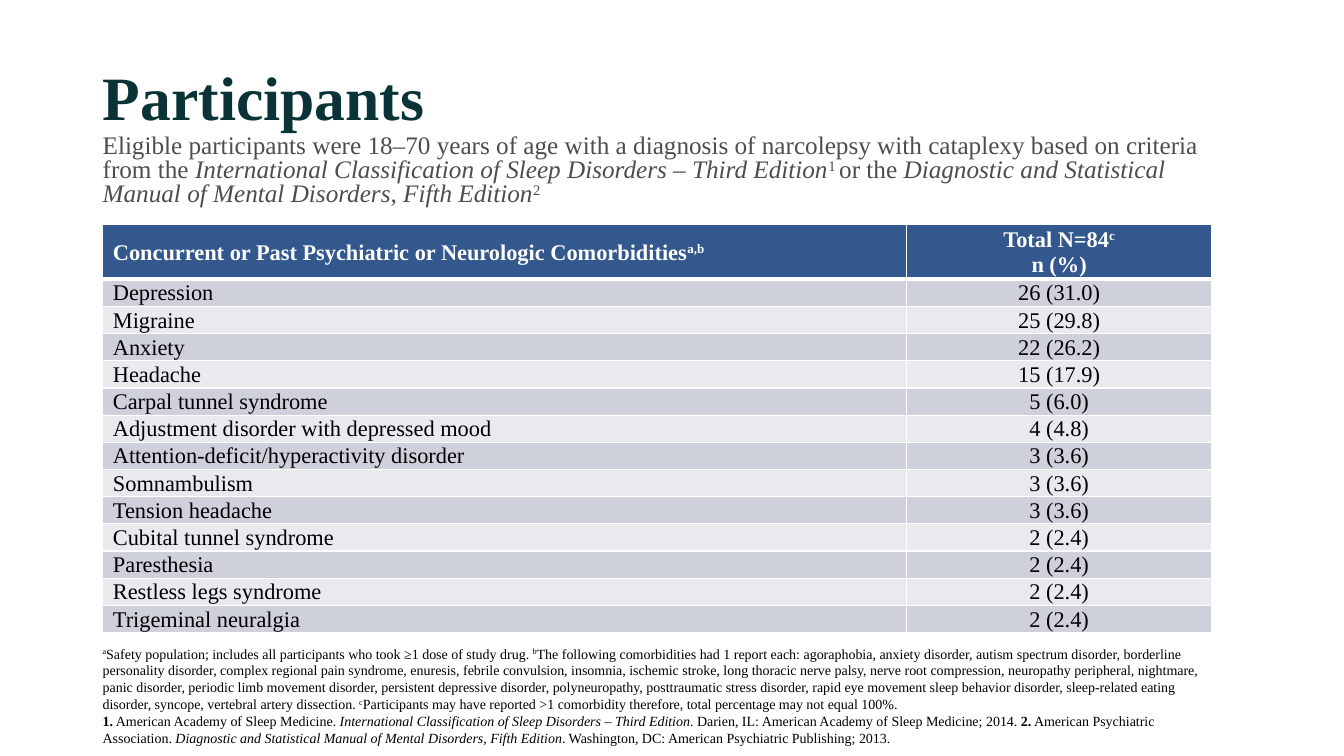
from lxml import etree
from pptx import Presentation
from pptx.dml.color import RGBColor
from pptx.enum import text
from pptx.oxml import ns
from pptx.util import Inches, Pt

FONT = "Times New Roman"
TEAL = RGBColor(0x0A, 0x33, 0x38)
GRAY = RGBColor(0x4D, 0x4D, 0x4D)
BLACK = RGBColor(0, 0, 0)
WHITE = RGBColor(0xFF, 0xFF, 0xFF)
BLUE = RGBColor(0x33, 0x58, 0x8D)
BANDS = (RGBColor(0xCE, 0xD1, 0xDB), RGBColor(0xE8, 0xEA, 0xEE))
PLAIN, BOLD, ITALIC, SUPER = range(4)

PARTICIPANT_TOTAL = 84
HEADINGS = (
    [[("Concurrent or Past Psychiatric or Neurologic Comorbidities", PLAIN), ("a,b", SUPER)]],
    [[("Total N=84", PLAIN), ("c", SUPER)], [("n (%)", PLAIN)]],
)
COMORBIDITIES = (
    ("Depression", 26),
    ("Migraine", 25),
    ("Anxiety", 22),
    ("Headache", 15),
    ("Carpal tunnel syndrome", 5),
    ("Adjustment disorder with depressed mood", 4),
    ("Attention-deficit/hyperactivity disorder", 3),
    ("Somnambulism", 3),
    ("Tension headache", 3),
    ("Cubital tunnel syndrome", 2),
    ("Paresthesia", 2),
    ("Restless legs syndrome", 2),
    ("Trigeminal neuralgia", 2),
)
ELIGIBILITY = [[
    ("Eligible participants were 18–70 years of age with a diagnosis of narcolepsy "
     "with cataplexy based on criteria from the ", PLAIN),
    ("International Classification of Sleep Disorders ‒ Third Edition", ITALIC),
    ("1 ", SUPER),
    ("or the ", PLAIN),
    ("Diagnostic and Statistical Manual of Mental Disorders, Fifth Edition", ITALIC),
    ("2", SUPER),
]]
FOOTNOTES = [
    [
        ("a", SUPER),
        ("Safety population; includes all participants who took ≥1 dose of study drug. ", PLAIN),
        ("b", SUPER),
        ("The following comorbidities had 1 report each: agoraphobia, anxiety disorder, "
         "autism spectrum disorder, borderline personality disorder, complex regional pain "
         "syndrome, enuresis, febrile convulsion, insomnia, ischemic stroke, long thoracic "
         "nerve palsy, nerve root compression, neuropathy peripheral, nightmare, panic "
         "disorder, periodic limb movement disorder, persistent depressive disorder, "
         "polyneuropathy, posttraumatic stress disorder, rapid eye movement sleep behavior "
         "disorder, sleep-related eating disorder, syncope, vertebral artery dissection. ", PLAIN),
        ("c", SUPER),
        ("Participants may have reported >1 comorbidity therefore, total percentage may "
         "not equal 100%.", PLAIN),
    ],
    [
        ("1.", BOLD),
        (" American Academy of Sleep Medicine. ", PLAIN),
        ("International Classification of Sleep Disorders – Third Edition", ITALIC),
        (". Darien, IL: American Academy of Sleep Medicine; 2014. ", PLAIN),
        ("2.", BOLD),
        (" American Psychiatric Association. ", PLAIN),
        ("Diagnostic and Statistical Manual of Mental Disorders, Fifth Edition", ITALIC),
        (". Washington, DC: American Psychiatric Publishing; 2013.", PLAIN),
    ],
]


def write(frame, paragraphs, size, color, bold=False, align=text.PP_ALIGN.LEFT, spacing=None):
    for index, pieces in enumerate(paragraphs):
        paragraph = frame.add_paragraph() if index else frame.paragraphs[0]
        paragraph.alignment = align
        paragraph.line_spacing = spacing
        font = paragraph.font
        font.name, font.size, font.bold = FONT, Pt(size), bold
        font.color.rgb = color
        for wording, style in pieces:
            run = paragraph.add_run()
            run.text = wording
            if style == BOLD:
                run.font.bold = True
            elif style == ITALIC:
                run.font.italic = True
            elif style == SUPER:
                run.font._element.set("baseline", "30000")


def add_title(slide, wording):
    title = slide.shapes.title
    title.left, title.top = Inches(0.92), Inches(0.27)
    title.width, title.height = Inches(11.5), Inches(1.45)
    title.text_frame.vertical_anchor = text.MSO_ANCHOR.MIDDLE
    write(title.text_frame, [[(wording, PLAIN)]], 44, TEAL, bold=True, spacing=0.9)


def add_note(slide, top, width, height, paragraphs, size, color, spacing=None):
    note = slide.shapes.add_textbox(Inches(0.92), Inches(top), Inches(width), Inches(height))
    note.text_frame.word_wrap = True
    write(note.text_frame, paragraphs, size, color, spacing=spacing)


def add_borders(cell, bottom):
    properties = cell._tc.get_or_add_tcPr()
    for side, points in (("L", 1), ("R", 1), ("T", 1), ("B", bottom)):
        line = etree.SubElement(properties, ns.qn(f"a:ln{side}"), w=str(Pt(points)))
        fill = etree.SubElement(line, ns.qn("a:solidFill"))
        etree.SubElement(fill, ns.qn("a:srgbClr"), val=str(WHITE))


def fill_row(table, row, contents, fill, color, heading=False):
    for column, paragraphs in enumerate(contents):
        cell = table.cell(row, column)
        add_borders(cell, 3 if heading else 1)
        cell.fill.solid()
        cell.fill.fore_color.rgb = fill
        cell.vertical_anchor = text.MSO_ANCHOR.MIDDLE
        cell.margin_left = cell.margin_right = Inches(0.1)
        cell.margin_top, cell.margin_bottom = Inches(0.01), 0
        align = text.PP_ALIGN.CENTER if column else text.PP_ALIGN.LEFT
        write(cell.text_frame, paragraphs, 16, color, bold=heading, align=align)


def add_comorbidity_table(slide):
    table = slide.shapes.add_table(
        len(COMORBIDITIES) + 1, 2, Inches(1.02), Inches(2.23), Inches(11), Inches(4.05)
    ).table
    table.columns[0].width, table.columns[1].width = Inches(7.97), Inches(3.03)
    for index, row in enumerate(table.rows):
        row.height = Inches(0.27 if index else 0.54)
    fill_row(table, 0, HEADINGS, BLUE, WHITE, heading=True)
    for row, (disorder, count) in enumerate(COMORBIDITIES, 1):
        share = f"{count} ({100 * count / PARTICIPANT_TOTAL:.1f})"
        contents = ([[(disorder, PLAIN)]], [[(share, PLAIN)]])
        fill_row(table, row, contents, BANDS[(row - 1) % 2], BLACK)


def main():
    deck = Presentation()
    deck.slide_width, deck.slide_height = Inches(13.33), Inches(7.5)
    slide = deck.slides.add_slide(deck.slide_layouts[5])
    add_comorbidity_table(slide)
    add_note(slide, 6.35, 11.26, 1.11, FOOTNOTES, 10, BLACK)
    add_title(slide, "Participants")
    add_note(slide, 1.29, 11.27, 0.83, ELIGIBILITY, 18, GRAY, spacing=0.8)
    deck.save("out.pptx")


if __name__ == "__main__":
    main()
